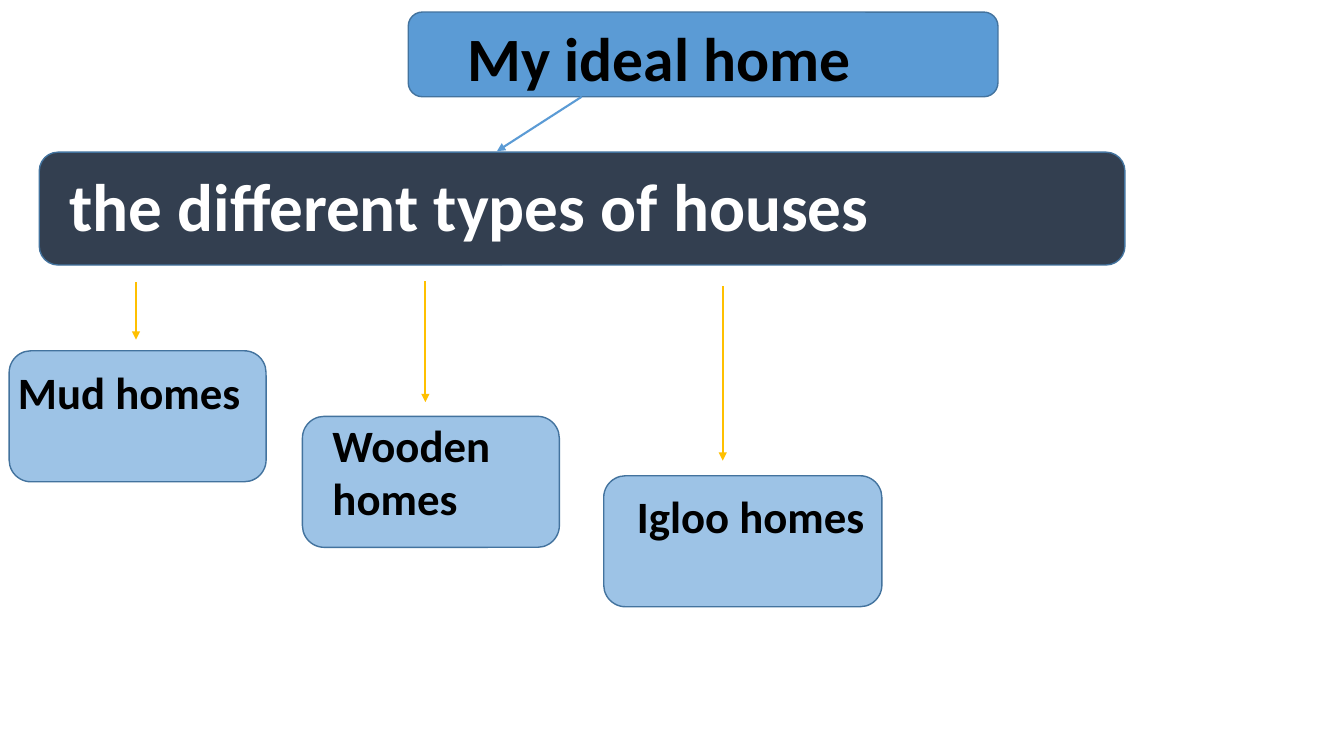
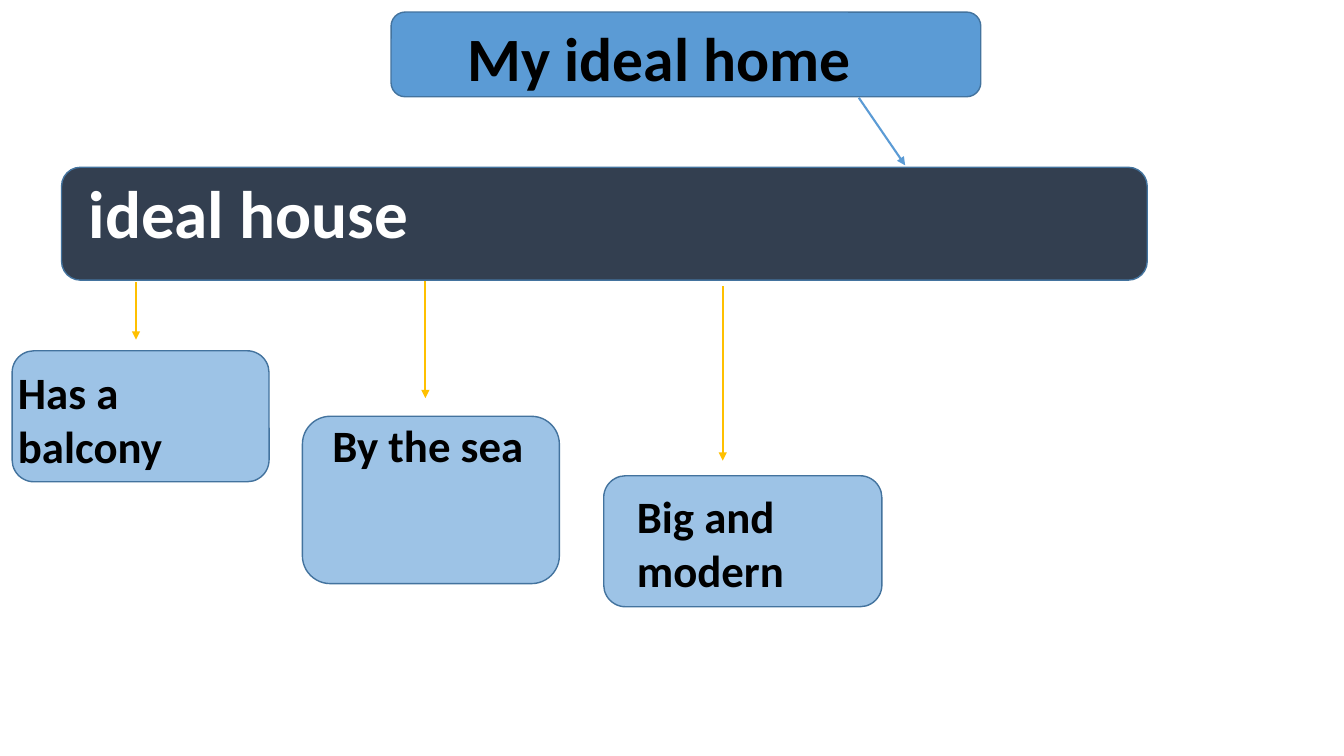
"""Build two slides that map out an ideal home."""
from dataclasses import dataclass

from lxml import etree
from pptx import Presentation
from pptx import util as u
from pptx.dml.color import RGBColor
from pptx.enum import shapes, text
from pptx.oxml import ns


@dataclass(frozen=True)
class Theme:
    font: str = "Calibri"
    blue: str = "5B9BD5"
    navy: str = "333F50"
    pale: str = "9DC3E6"
    edge: str = "43739E"
    gold: str = "FFC000"
    black: str = "000000"
    white: str = "FFFFFF"
    title: int = 44
    band: int = 48
    card: int = 32
    rim: float = 1
    arrow: float = 1.5


theme = Theme()
deck = Presentation()
deck.slide_width, deck.slide_height = u.Inches(13.333), u.Inches(7.5)
col, row = deck.slide_width / 100, deck.slide_height / 100


def write(shape, words, *, at, size, color=theme.black):
    shape.left, shape.top, shape.width, shape.height = (
        round(n * unit) for n, unit in zip(at, (col, row, col, row)))
    frame = shape.text_frame
    frame.word_wrap = True
    frame.auto_size = text.MSO_AUTO_SIZE.NONE
    frame.vertical_anchor = text.MSO_ANCHOR.TOP
    frame.text = words
    for para in frame.paragraphs:
        para.alignment = text.PP_ALIGN.LEFT
        para.font.name = theme.font
        para.font.size = u.Pt(size)
        para.font.bold = True
        para.font.color.rgb = RGBColor.from_string(color)


def arrow(slide, start, end, color):
    (x1, y1), (x2, y2) = start, end
    link = slide.shapes.add_connector(
        shapes.MSO_CONNECTOR.STRAIGHT, round(x1 * col), round(y1 * row),
        round(x2 * col), round(y2 * row))
    link.line.color.rgb = RGBColor.from_string(color)
    link.line.width = u.Pt(theme.arrow)
    etree.SubElement(link.line._get_or_add_ln(), ns.qn("a:tailEnd"), type="triangle")
    etree.SubElement(link.element.spPr, ns.qn("a:effectLst"))


stems = [(10.12, 37.33), (31.65, 37.2), (53.78, 37.87)]
notes = [(0.6, 47.6), (24, 54.53), (46.65, 64)]
pages = [
    dict(head=30.38, band=(2.92, 20.13), label=(4.42, 21.07),
         topic="the different types of houses",
         link=((43.28, 12.8), (36.98, 20)), tips=(44.93, 53.2, 60.93),
         first=0.68, tall=17.33,
         cards=("Mud homes", "Wooden\nhomes", "Igloo homes")),
    dict(head=29.1, band=(4.58, 22.13), label=(5.85, 22),
         topic="ideal house",
         link=((63.9, 12.93), (67.35, 21.87)), tips=(44.93, 52.67, 60.93),
         first=0.9, tall=22.13,
         cards=("Has a balcony", "By the sea", "Big and modern")),
]

for page in pages:
    slide = deck.slides.add_slide(deck.slide_layouts[5])
    boxes = [
        (page["head"], 1.6, 43.88, 11.2, theme.blue),
        (*page["band"], 80.78, 14.93, theme.navy),
        (page["first"], 46.4, 19.12, 17.33, theme.pale),
        (22.5, 55.07, 19.12, page["tall"], theme.pale),
        (44.92, 62.93, 20.7, 17.33, theme.pale),
    ]
    for x, y, wide, high, fill in boxes:
        box = slide.shapes.add_shape(
            shapes.MSO_SHAPE.ROUNDED_RECTANGLE, round(x * col), round(y * row),
            round(wide * col), round(high * row))
        box.shadow.inherit = False
        box.fill.solid()
        box.fill.fore_color.rgb = RGBColor.from_string(fill)
        box.line.color.rgb = RGBColor.from_string(theme.edge)
        box.line.width = u.Pt(theme.rim)

    arrow(slide, *page["link"], theme.blue)
    for (x, y), tip in zip(stems, page["tips"]):
        arrow(slide, (x, y), (x, tip), theme.gold)

    write(slide.shapes.add_textbox(0, 0, 0, 0), page["topic"],
          at=(*page["label"], 79.5, 12.13), size=theme.band, color=theme.white)
    for spot, words in zip(notes, page["cards"]):
        write(slide.shapes.add_textbox(0, 0, 0, 0), words,
              at=(*spot, 19.35, 15.73), size=theme.card)

    title = slide.shapes.title
    write(title, "My ideal home", at=(34.05, 2, 32, 11.2), size=theme.title)
    title.element.getparent().append(title.element)

deck.save("out.pptx")
